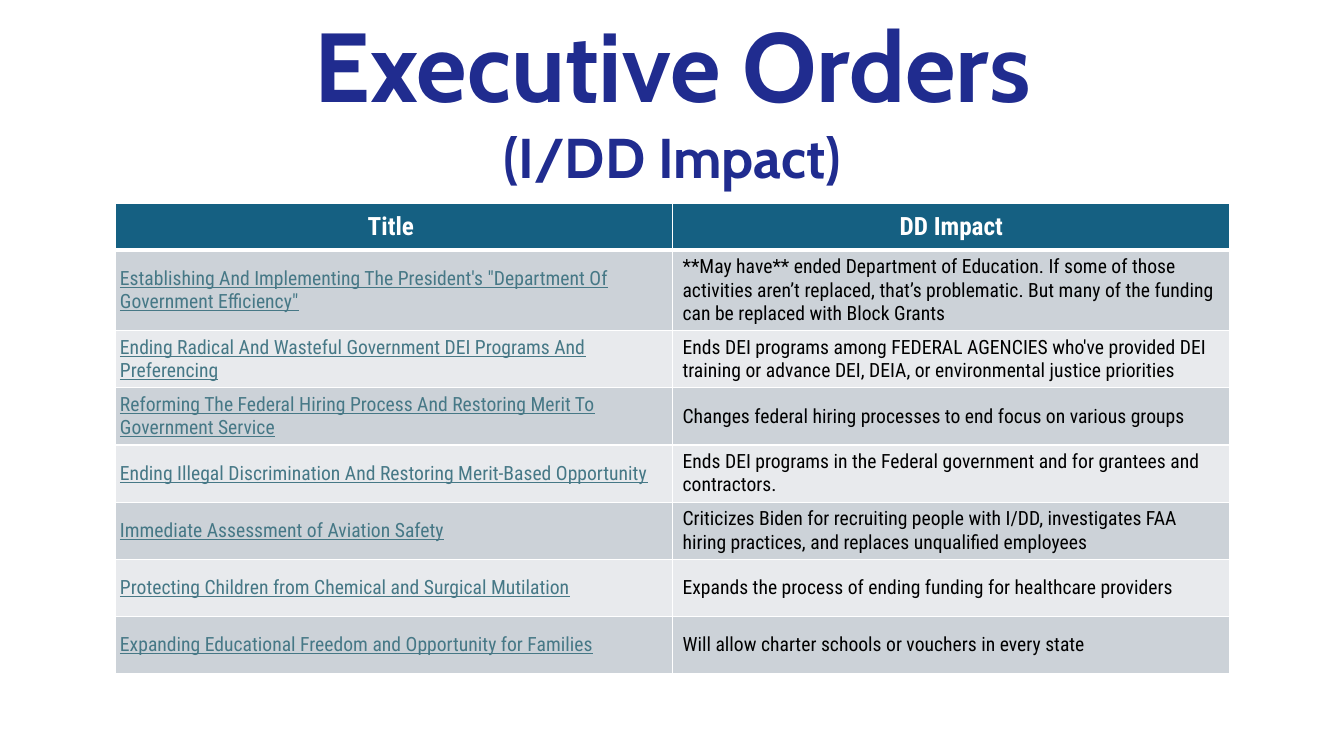
"""Build the slide on executive orders and their I/DD impact."""
import pptx
import pptx.dml.color
import pptx.enum.text
import pptx.oxml
import pptx.oxml.ns
import pptx.util
from pptx.util import Inches

COLORS = {
    "title": "202C8F",
    "header": "156082",
    "odd": "CCD2D8",
    "even": "E8EAED",
    "link": "467886",
    "text": "000000",
    "white": "FFFFFF",
}
TITLE_FONT = "Cabin"
TABLE_FONT = "Roboto Condensed"
HEADINGS = ("Title ", "DD Impact")
ORDERS = [
    ("Establishing And Implementing The President's \"Department Of Government Efficiency\"",
     "**May have** ended Department of Education. If some of those activities aren’t replaced, "
     "that’s problematic. But many of the funding can be replaced with Block Grants"),
    ("Ending Radical And Wasteful Government DEI Programs And Preferencing",
     "Ends DEI programs among FEDERAL AGENCIES who've provided DEI training or advance DEI, "
     "DEIA, or environmental justice priorities"),
    ("Reforming The Federal Hiring Process And Restoring Merit To Government Service",
     "Changes federal hiring processes to end focus on various groups"),
    ("Ending Illegal Discrimination And Restoring Merit-Based Opportunity",
     "Ends DEI programs in the Federal government and for grantees and contractors."),
    ("Immediate Assessment of Aviation Safety",
     "Criticizes Biden for recruiting people with I/DD, investigates FAA hiring practices, "
     "and replaces unqualified employees"),
    ("Protecting Children from Chemical and Surgical Mutilation",
     "Expands the process of ending funding for healthcare providers"),
    ("Expanding Educational Freedom and Opportunity for Families",
     "Will allow charter schools or vouchers in every state"),
]


def rgb(name):
    """Return the named colour."""
    return pptx.dml.color.RGBColor.from_string(COLORS[name])


def write(para, text, font, size, color, bold=False, underline=False, centred=False):
    """Fill a paragraph with one formatted run."""
    para.text = text
    if centred:
        para.alignment = pptx.enum.text.PP_ALIGN.CENTER
    span = para.runs[0]
    span.font.name = font
    span.font.size = pptx.util.Pt(size)
    span.font.bold = bold
    span.font.underline = underline
    span.font.color.rgb = rgb(color)


def add_title(page):
    """Add the two-line heading."""
    box = page.shapes.add_textbox(Inches(1.34), Inches(0), Inches(10.66), Inches(1.95))
    frame = box.text_frame
    frame.word_wrap = True
    write(frame.paragraphs[0], "Executive Orders", TITLE_FONT, 70, "title", bold=True, centred=True)
    write(frame.add_paragraph(), "(I/DD Impact)", TITLE_FONT, 40, "title", bold=True, centred=True)


def set_borders(cell, bottom_width):
    """Draw white borders round a cell."""
    properties = cell._tc.get_or_add_tcPr()
    for side, width in (("L", 1), ("R", 1), ("T", 1), ("B", bottom_width)):
        properties.append(pptx.oxml.parse_xml(
            f'<a:ln{side} {pptx.oxml.ns.nsdecls("a")} w="{pptx.util.Pt(width)}">'
            f'<a:solidFill><a:srgbClr val="{COLORS["white"]}"/></a:solidFill></a:ln{side}>'))


def style_cell(cell, fill, margins=None, bottom_width=1):
    """Set a cell's borders, fill, anchor and margins."""
    set_borders(cell, bottom_width)
    cell.fill.solid()
    cell.fill.fore_color.rgb = rgb(fill)
    cell.vertical_anchor = pptx.enum.text.MSO_ANCHOR.MIDDLE
    if margins:
        (cell.margin_left, cell.margin_top,
         cell.margin_right, cell.margin_bottom) = [Inches(margin) for margin in margins]


def add_orders_table(page):
    """Add the table of orders and their impact."""
    heights = [0.46, 0.8] + [0.565] * (len(ORDERS) - 1)
    table = page.shapes.add_table(
        len(heights), 2, Inches(1.14), Inches(2.02), Inches(11.06), Inches(sum(heights))).table
    for row, height in zip(table.rows, heights):
        row.height = Inches(height)
    for column, heading in enumerate(HEADINGS):
        cell = table.cell(0, column)
        style_cell(cell, "header", (0.01, 0.01, 0.01, 0), bottom_width=3)
        write(cell.text_frame.paragraphs[0], heading, TABLE_FONT, 18, "white",
              bold=True, centred=True)
    for number, (order, impact) in enumerate(ORDERS, start=1):
        fill = "odd" if number % 2 else "even"
        order_cell, impact_cell = table.cell(number, 0), table.cell(number, 1)
        style_cell(order_cell, fill, (0.05,) * 4)
        style_cell(impact_cell, fill)
        write(order_cell.text_frame.paragraphs[0], order, TABLE_FONT, 14, "link", underline=True)
        write(impact_cell.text_frame.paragraphs[0], impact, TABLE_FONT, 14, "text")


def main():
    """Build and save the deck."""
    deck = pptx.Presentation()
    deck.slide_width, deck.slide_height = Inches(13.33), Inches(7.5)
    page = deck.slides.add_slide(deck.slide_layouts[6])
    add_title(page)
    add_orders_table(page)
    deck.save("out.pptx")


if __name__ == "__main__":
    main()
